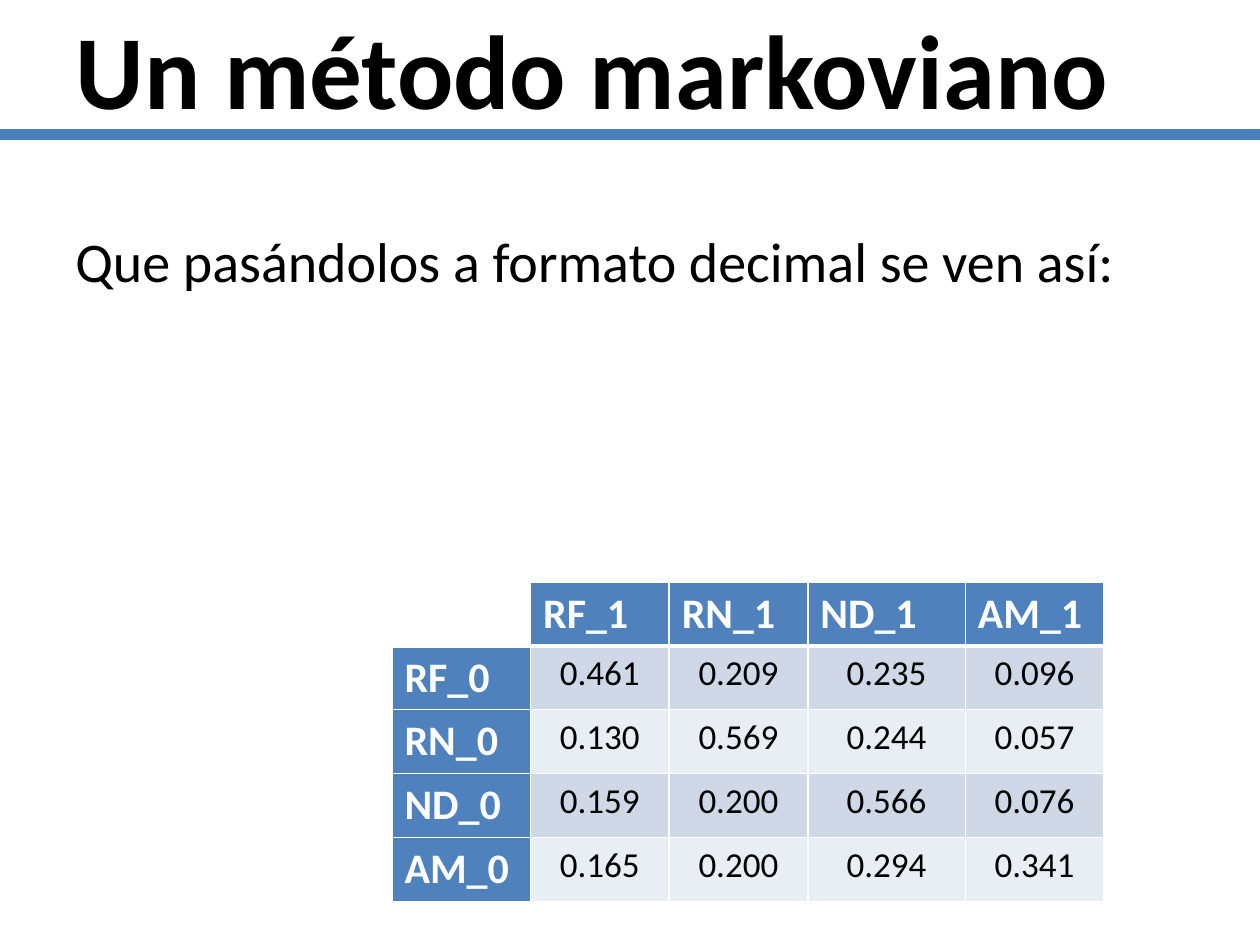
from typing import NamedTuple

from lxml import etree
from pptx import Presentation
from pptx.dml.color import RGBColor
from pptx.enum import shapes, text
from pptx.oxml.ns import qn
from pptx.util import Pt

FONT = "Calibri"
BLACK = RGBColor(0x00, 0x00, 0x00)
WHITE = RGBColor(0xFF, 0xFF, 0xFF)
RULE_BLUE = RGBColor(0x4B, 0x7E, 0xBC)
HEADER_BLUE = RGBColor(0x4F, 0x81, 0xBD)
BANDS = (RGBColor(0xD0, 0xD8, 0xE8), RGBColor(0xE9, 0xED, 0xF4))

SLIDE_WIDTH, SLIDE_HEIGHT = 720, 540
MARGIN = 36
RULE_Y = 77
COLUMN_WIDTHS = (79.2, 79.2, 79.2, 90, 79.2)
ROW_HEIGHT = 36.5


class Style(NamedTuple):
    size: float
    color: RGBColor
    bold: bool
    align: text.PP_ALIGN


TITLE = Style(60, BLACK, True, text.PP_ALIGN.LEFT)
BODY = Style(32, BLACK, False, text.PP_ALIGN.LEFT)
HEADER = Style(24, WHITE, True, text.PP_ALIGN.LEFT)
VALUE = Style(20, BLACK, False, text.PP_ALIGN.CENTER)

STATES = ("RF", "RN", "ND", "AM")
TRANSITIONS = (
    ("0.461", "0.209", "0.235", "0.096"),
    ("0.130", "0.569", "0.244", "0.057"),
    ("0.159", "0.200", "0.566", "0.076"),
    ("0.165", "0.200", "0.294", "0.341"),
)


def write(frame, words: str, style: Style):
    para = frame.paragraphs[0]
    para.text = words
    para.alignment = style.align
    para.font.name = FONT
    para.font.size = Pt(style.size)
    para.font.bold = style.bold
    para.font.color.rgb = style.color
    return para


def place(shape, left: float, top: float, width: float, height: float) -> None:
    shape.left, shape.top = Pt(left), Pt(top)
    shape.width, shape.height = Pt(width), Pt(height)


def add_borders(cell, bottom: float, top: float) -> None:
    """Draw white borders; they must stand before the fill in the cell."""
    properties = cell._tc.get_or_add_tcPr()
    widths = {"lnL": 1, "lnR": 1, "lnT": top, "lnB": bottom}
    for position, (side, width) in enumerate(widths.items()):
        line = etree.Element(qn(f"a:{side}"), w=str(Pt(width)))
        fill = etree.SubElement(line, qn("a:solidFill"))
        etree.SubElement(fill, qn("a:srgbClr"), val=str(WHITE))
        properties.insert(position, line)


def add_transition_table(page, left: float, top: float) -> None:
    rows = [("", *(f"{state}_1" for state in STATES))]
    rows += [(f"{state}_0", *values) for state, values in zip(STATES, TRANSITIONS)]
    frame = page.shapes.add_table(
        len(rows), len(COLUMN_WIDTHS), Pt(left), Pt(top),
        Pt(sum(COLUMN_WIDTHS)), Pt(ROW_HEIGHT * len(rows)))
    table = frame.table
    for column, width in zip(table.columns, COLUMN_WIDTHS):
        column.width = Pt(width)
    for r, row in enumerate(rows):
        table.rows[r].height = Pt(ROW_HEIGHT)
        for c, words in enumerate(row):
            cell = table.cell(r, c)
            is_header = r == 0 or c == 0
            write(cell.text_frame, words, HEADER if is_header else VALUE)
            if r == c == 0:
                cell.fill.background()
            else:
                cell.fill.solid()
                cell.fill.fore_color.rgb = HEADER_BLUE if is_header else BANDS[(r - 1) % 2]
            add_borders(cell, bottom=3 if r == 0 else 1, top=3 if r == 1 else 1)


def main() -> None:
    deck = Presentation()
    deck.slide_width, deck.slide_height = Pt(SLIDE_WIDTH), Pt(SLIDE_HEIGHT)
    page = deck.slides.add_slide(deck.slide_layouts[5])

    # Rule under the title
    rule = page.shapes.add_connector(
        shapes.MSO_CONNECTOR.STRAIGHT, 0, Pt(RULE_Y), Pt(SLIDE_WIDTH), Pt(RULE_Y))
    rule.line.color.rgb = RULE_BLUE
    rule.line.width = Pt(6)
    etree.SubElement(rule._element.spPr, qn("a:effectLst"))

    # Title
    title = page.shapes.title
    place(title, MARGIN, 0, SLIDE_WIDTH - 2 * MARGIN, RULE_Y)
    title.text_frame.auto_size = text.MSO_AUTO_SIZE.NONE
    title.text_frame.vertical_anchor = text.MSO_ANCHOR.MIDDLE
    write(title.text_frame, "Un método markoviano", TITLE)

    # Introduction
    box = page.shapes.add_textbox(
        Pt(MARGIN), Pt(126), Pt(SLIDE_WIDTH - 2 * MARGIN), Pt(356.4))
    box.text_frame.word_wrap = True
    para = write(box.text_frame, "Que pasándolos a formato decimal se ven así:", BODY)
    para.space_before = Pt(6.4)

    # Transition probabilities
    add_transition_table(page, 224, 332.6)

    deck.save("out.pptx")


if __name__ == "__main__":
    main()
